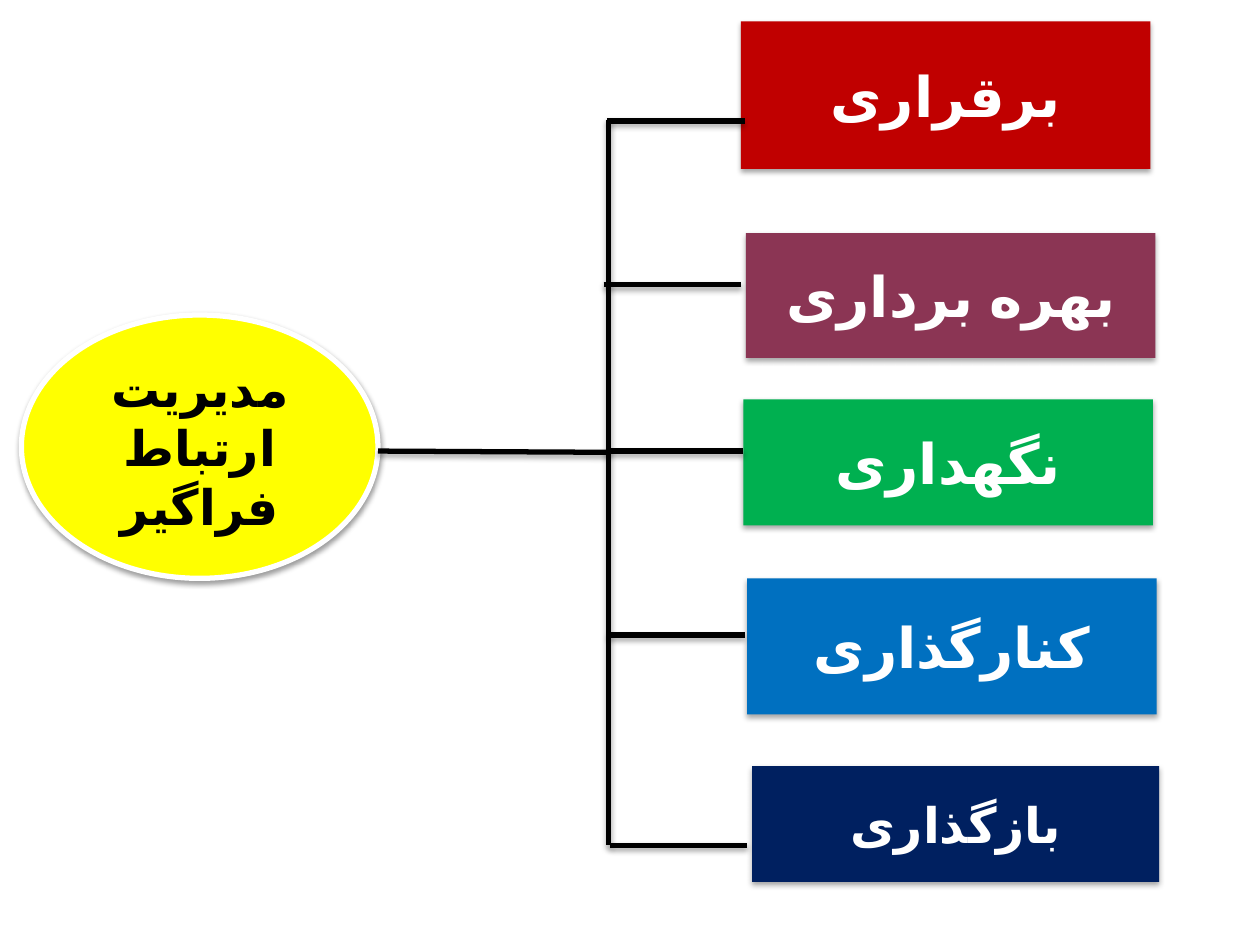
from lxml import etree
from pptx import Presentation
from pptx.dml.color import RGBColor
from pptx.enum.shapes import MSO_CONNECTOR, MSO_SHAPE
from pptx.enum.text import MSO_ANCHOR, PP_ALIGN
from pptx.oxml.ns import qn
from pptx.util import Inches, Pt

RECT, OVAL = MSO_SHAPE.RECTANGLE, MSO_SHAPE.OVAL
STRAIGHT = MSO_CONNECTOR.STRAIGHT
CENTER, MIDDLE = PP_ALIGN.CENTER, MSO_ANCHOR.MIDDLE

BLACK = RGBColor(0x00, 0x00, 0x00)
WHITE = RGBColor(0xFF, 0xFF, 0xFF)
YELLOW = RGBColor(0xFF, 0xFF, 0x00)
RED = RGBColor(0xC0, 0x00, 0x00)
PLUM = RGBColor(0x8B, 0x35, 0x54)
GREEN = RGBColor(0x00, 0xB0, 0x50)
BLUE = RGBColor(0x00, 0x70, 0xC0)
NAVY = RGBColor(0x00, 0x20, 0x60)

TRUNK_X = 4.83
BRANCH_LENGTH = 1.09
STAGES = [
    ("برقراری", RED, (5.88, 0.17, 3.25, 1.17), 32),
    ("بهره برداری", PLUM, (5.92, 1.85, 3.25, 0.99), 32),
    ("نگهداری", GREEN, (5.9, 3.17, 3.25, 1), 32),
    ("کنارگذاری", BLUE, (5.93, 4.59, 3.25, 1.08), 32),
    ("بازگذاری", NAVY, (5.97, 6.08, 3.23, 0.92), 28),
]
BRANCHES = [(4.82, 0.96), (4.79, 2.26), (4.81, 3.58), (4.82, 5.04), (4.84, 6.71)]


class Diagram:
    """Draws shadowed boxes and lines on the current slide in one style."""

    font = {"name": "Arial", "bold": True}
    language = "fa-IR"
    line_width = Pt(3)

    def __init__(self, slide):
        self.slide = slide

    def shadow(self, sp, opacity):
        spPr = sp._element.spPr
        for old in spPr.findall(qn("a:effectLst")):
            spPr.remove(old)
        effects = etree.SubElement(spPr, qn("a:effectLst"))
        outer = etree.SubElement(effects, qn("a:outerShdw"), blurRad="40000",
                                 dist="23000", dir="5400000", rotWithShape="0")
        color = etree.SubElement(outer, qn("a:srgbClr"), val=str(BLACK))
        etree.SubElement(color, qn("a:alpha"), val=str(opacity * 1000))

    def box(self, kind, text, fill, place, size, color=WHITE, outline=None, opacity=35):
        sp = self.slide.shapes.add_shape(kind, *map(Inches, place))
        sp.fill.solid()
        sp.fill.fore_color.rgb = fill
        if outline is None:
            sp.line.fill.background()
        else:
            sp.line.color.rgb = outline
            sp.line.width = self.line_width
        self.shadow(sp, opacity)
        tf = sp.text_frame
        tf.word_wrap = True
        tf.vertical_anchor = MIDDLE
        p = tf.paragraphs[0]
        p.alignment = CENTER
        p._p.get_or_add_pPr().set("rtl", "1")
        r = p.add_run()
        r.text = text
        for name, value in {**self.font, "size": Pt(size)}.items():
            setattr(r.font, name, value)
        r.font.color.rgb = color
        rPr = r._r.get_or_add_rPr()
        rPr.set("lang", self.language)
        etree.SubElement(rPr, qn("a:cs"), typeface=self.font["name"])

    def line(self, x1, y1, x2, y2):
        sp = self.slide.shapes.add_connector(STRAIGHT, *map(Inches, (x1, y1, x2, y2)))
        sp.line.color.rgb = BLACK
        sp.line.width = self.line_width
        self.shadow(sp, 35)


def main():
    prs = Presentation()
    prs.slide_width, prs.slide_height = Inches(10), Inches(7.5)
    d = Diagram(prs.slides.add_slide(prs.slide_layouts[6]))
    d.box(OVAL, "مدیریت ارتباط فراگیر", YELLOW, (0.17, 2.5, 2.83, 2.09), 28,
          color=BLACK, outline=WHITE, opacity=38)
    d.line(3, 3.58, TRUNK_X, 3.59)
    d.line(TRUNK_X, 0.95, TRUNK_X, 6.71)
    for stage in STAGES:
        d.box(RECT, *stage)
    for x, y in BRANCHES:
        d.line(x, y, x + BRANCH_LENGTH, y)
    prs.save("out.pptx")


if __name__ == "__main__":
    main()
